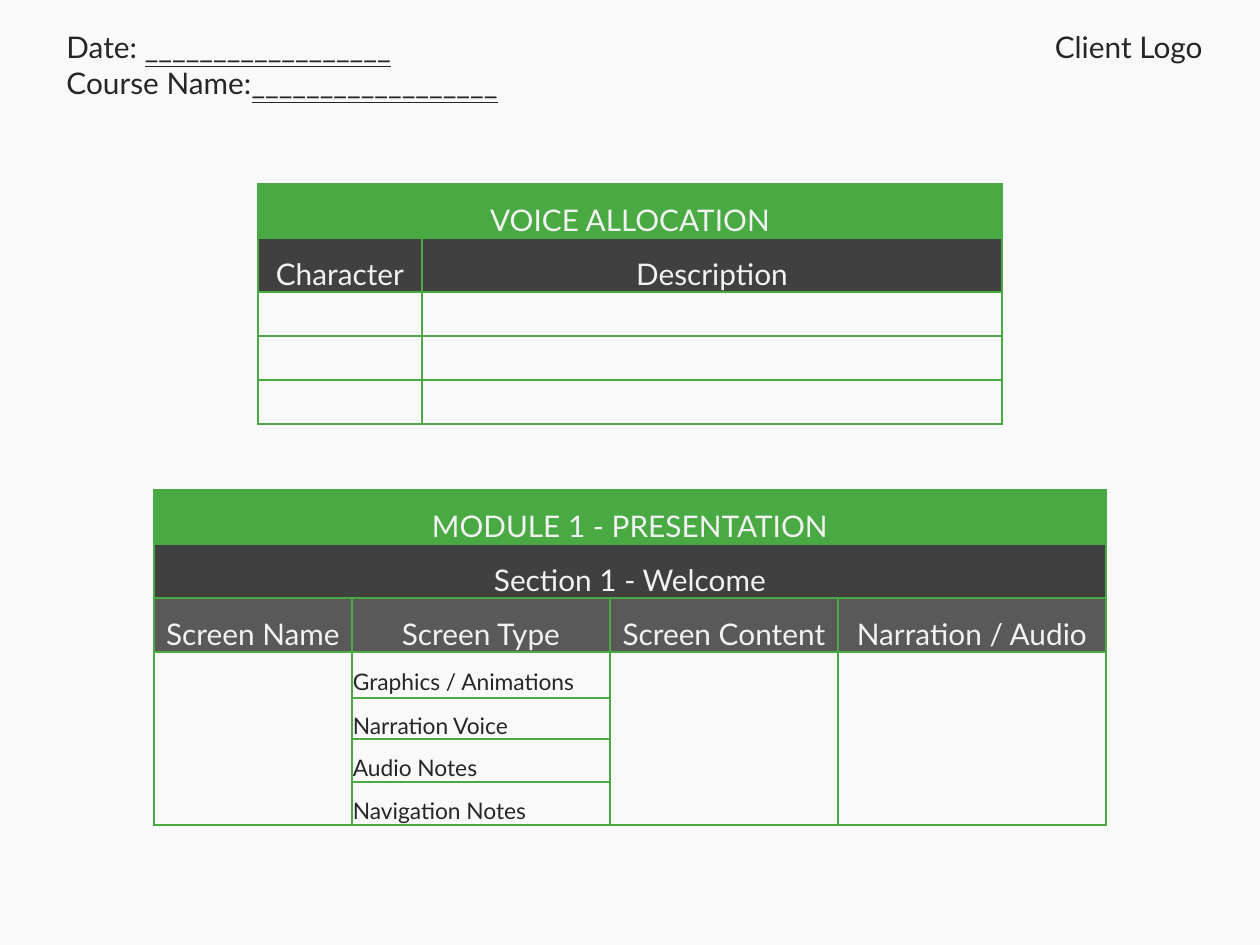
"""Build a course storyboard template slide with voice and module tables."""
from dataclasses import dataclass, field

from lxml import etree
from pptx import Presentation
from pptx import util as u
from pptx.dml.color import RGBColor
from pptx.enum import text
from pptx.oxml.ns import qn

SCALE = 914400 / 126
FONT = "Lato"
PAPER = RGBColor(0xF9, 0xF9, 0xF9)
INK = RGBColor(0x26, 0x26, 0x26)
LIGHT = RGBColor(0xF2, 0xF2, 0xF2)
GREEN = RGBColor(0x49, 0xAA, 0x43)
DARK = RGBColor(0x40, 0x40, 0x40)
GREY = RGBColor(0x59, 0x59, 0x59)
BLANK = "_" * 18


@dataclass
class Label:
    row: int
    col: int
    words: str
    size: int = 17
    color: RGBColor = LIGHT
    align: text.PP_ALIGN = text.PP_ALIGN.CENTER


@dataclass
class Grid:
    left: int
    top: int
    cols: list[int]
    rows: list[int]
    fills: list[RGBColor]
    inset: int
    labels: list[Label]
    merges: list[tuple[int, int, int, int]] = field(default_factory=list)


def px(n: int) -> u.Emu:
    return u.Emu(round(n * SCALE))


def add_run(p, words: str, size: int, color: RGBColor, underline: bool = False) -> None:
    r = p.add_run()
    r.text = words
    r.font.name = FONT
    r.font.size = u.Pt(size)
    r.font.color.rgb = color
    if underline:
        r.font.underline = True


def style_cell(cell, fill: RGBColor, inset: int) -> None:
    tc_pr = cell._tc.get_or_add_tcPr()
    for side in ("a:lnL", "a:lnR", "a:lnT", "a:lnB"):
        ln = etree.SubElement(tc_pr, qn(side), w=str(u.Pt(1)))
        solid = etree.SubElement(ln, qn("a:solidFill"))
        etree.SubElement(solid, qn("a:srgbClr"), val=str(GREEN))
    cell.fill.solid()
    cell.fill.fore_color.rgb = fill
    cell.margin_left = cell.margin_right = px(inset)
    cell.margin_top = cell.margin_bottom = 0
    cell.vertical_anchor = text.MSO_ANCHOR.MIDDLE


def add_grid(s, grid: Grid) -> None:
    frame = s.shapes.add_table(len(grid.rows), len(grid.cols), px(grid.left), px(grid.top),
                               px(sum(grid.cols)), px(sum(grid.rows)))
    table = frame.table
    table.first_row = table.horz_banding = False
    for col, width in zip(table.columns, grid.cols):
        col.width = px(width)
    for row, height, fill in zip(table.rows, grid.rows, grid.fills):
        row.height = px(height)
        for cell in row.cells:
            style_cell(cell, fill, grid.inset)
    for top, left, bottom, right in grid.merges:
        table.cell(top, left).merge(table.cell(bottom, right))
    for label in grid.labels:
        p = table.cell(label.row, label.col).text_frame.paragraphs[0]
        p.alignment = label.align
        p.line_spacing = 1.5
        add_run(p, label.words, label.size, label.color)


def add_note(s, left: int, height: int, lines: list[list[str]], align: text.PP_ALIGN) -> None:
    tf = s.shapes.add_textbox(px(left), px(23), px(546), px(height)).text_frame
    tf.word_wrap = True
    tf.auto_size = text.MSO_AUTO_SIZE.SHAPE_TO_FIT_TEXT
    for i, line in enumerate(lines):
        p = tf.add_paragraph() if i else tf.paragraphs[0]
        p.alignment = align
        for words in line:
            add_run(p, words, 17, INK, underline=words == BLANK)


def main() -> None:
    prs = Presentation()
    prs.slide_width, prs.slide_height = px(1260), px(945)
    s = prs.slides.add_slide(prs.slide_layouts[6])
    s.background.fill.solid()
    s.background.fill.fore_color.rgb = PAPER

    add_grid(s, Grid(
        258, 184, [164, 580], [54, 54] + [44] * 3, [GREEN, DARK] + [PAPER] * 3, 9,
        [Label(0, 0, "VOICE ALLOCATION"), Label(1, 0, "Character"), Label(1, 1, "Description")],
        [(0, 0, 0, 1)]))

    headings = ["Screen Name", "Screen Type", "Screen Content", "Narration / Audio"]
    details = ["Graphics / Animations", "Narration Voice", "Audio Notes", "Navigation Notes"]
    add_grid(s, Grid(
        154, 490, [198, 258, 228, 268], [54, 54, 54, 46, 41, 43, 43],
        [GREEN, DARK, GREY] + [PAPER] * 4, 1,
        [Label(0, 0, "MODULE 1 - PRESENTATION"), Label(1, 0, "Section 1 - Welcome")]
        + [Label(2, i, words) for i, words in enumerate(headings)]
        + [Label(i, 1, words, 13, INK, text.PP_ALIGN.LEFT) for i, words in enumerate(details, 3)],
        [(0, 0, 0, 3), (1, 0, 1, 3)] + [(3, col, 6, col) for col in (0, 2, 3)]))

    add_note(s, 54, 84, [["Date: ", BLANK], ["Course Name:", BLANK]], text.PP_ALIGN.LEFT)
    add_note(s, 669, 49, [["Client Logo"]], text.PP_ALIGN.RIGHT)
    prs.save("out.pptx")


if __name__ == "__main__":
    main()
